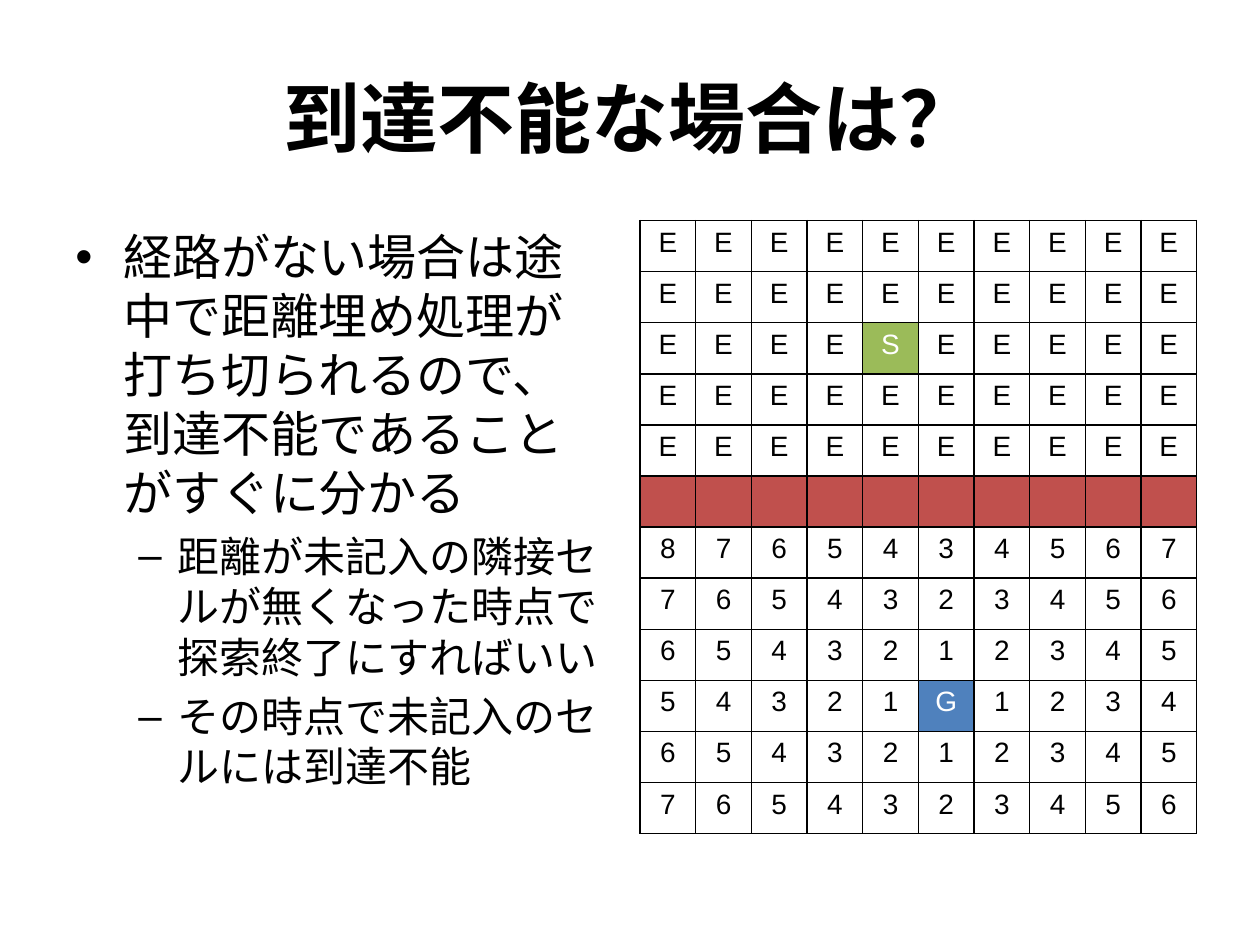
from lxml import etree
from pptx import Presentation
from pptx.dml.color import RGBColor
from pptx.enum import text
from pptx.oxml.ns import qn
from pptx.util import Inches, Pt

# Content
TITLE = "到達不能な場合は？"
BULLETS = [
    (0, "経路がない場合は途中で距離埋め処理が打ち切られるので、到達不能であることがすぐに分かる"),
    (1, "距離が未記入の隣接セルが無くなった時点で探索終了にすればいい"),
    (1, "その時点で未記入のセルには到達不能"),
]
WALL = "#"
GRID = [
    "EEEEEEEEEE",
    "EEEEEEEEEE",
    "EEEESEEEEE",
    "EEEEEEEEEE",
    "EEEEEEEEEE",
    WALL * 10,
    "8765434567",
    "7654323456",
    "6543212345",
    "54321G1234",
    "6543212345",
    "7654323456",
]

# Style
COLORS = {"ink": "000000", "light": "FFFFFF", "start": "9BBB59",
          "goal": "4F81BD", "wall": "C0504D"}
CELL_FILLS = {"S": "start", "G": "goal", WALL: "wall"}
JAPANESE, LATIN = "Noto Sans CJK JP", "Arial"
LEVELS = [
    {"size": 28, "line": 33.7, "left": 0.38, "hang": 0.38, "mark": "•"},
    {"size": 24, "line": 28.9, "left": 0.81, "hang": 0.31, "mark": "–"},
]


def add_span(para, words, size, font, color="ink", bold=False):
    span = para.add_run()
    span.text = words
    span.font.size = Pt(size)
    span.font.name = font
    span.font.bold = bold
    span.font.color.rgb = RGBColor.from_string(COLORS[color])
    east_asian = etree.SubElement(span.font._element, qn("a:ea"))
    east_asian.set("typeface", font)


def add_box(page, left, top, width, height, anchor):
    box = page.shapes.add_textbox(*map(Inches, (left, top, width, height)))
    box.text_frame.word_wrap = True
    box.text_frame.vertical_anchor = anchor
    return box.text_frame


def set_bullet(para, level):
    props = para._p.get_or_add_pPr()
    props.set("marL", str(Inches(level["left"])))
    props.set("indent", str(-Inches(level["hang"])))
    etree.SubElement(props, qn("a:buFont")).set("typeface", LATIN)
    etree.SubElement(props, qn("a:buChar")).set("char", level["mark"])


def set_borders(cell):
    props = cell._tc.get_or_add_tcPr()
    for position, side in enumerate(("lnL", "lnR", "lnT", "lnB")):
        line = etree.Element(qn(f"a:{side}"), w=str(Pt(1)))
        fill = etree.SubElement(line, qn("a:solidFill"))
        etree.SubElement(fill, qn("a:srgbClr")).set("val", COLORS["ink"])
        props.insert(position, line)


def fill_cell(cell, mark):
    if mark in CELL_FILLS:
        cell.fill.solid()
        cell.fill.fore_color.rgb = RGBColor.from_string(COLORS[CELL_FILLS[mark]])
    else:
        cell.fill.background()
    set_borders(cell)
    if mark != WALL:
        para = cell.text_frame.paragraphs[0]
        para.alignment = text.PP_ALIGN.CENTER
        add_span(para, mark, 16, LATIN, "light" if mark in CELL_FILLS else "ink")


def main():
    deck = Presentation()
    deck.slide_width, deck.slide_height = Inches(10), Inches(7.5)
    page = deck.slides.add_slide(deck.slide_layouts[6])

    # Title
    para = add_box(page, 0.5, 0.3, 9, 1.25, text.MSO_ANCHOR.MIDDLE).paragraphs[0]
    para.alignment = text.PP_ALIGN.CENTER
    add_span(para, TITLE, 44, JAPANESE, bold=True)

    # Bullets
    frame = add_box(page, 0.5, 1.75, 4.42, 4.95, text.MSO_ANCHOR.TOP)
    for index, (depth, words) in enumerate(BULLETS):
        para = frame.add_paragraph() if index else frame.paragraphs[0]
        level = LEVELS[depth]
        para.level = depth
        para.line_spacing = Pt(level["line"])
        para.space_before = Pt(level["size"] * 0.2)
        set_bullet(para, level)
        add_span(para, words, level["size"], JAPANESE)

    # Distance grid
    rows, columns = len(GRID), len(GRID[0])
    width, height = Inches(4.42), Inches(4.87)
    table = page.shapes.add_table(rows, columns, Inches(5.08), Inches(1.75),
                                  width, height).table
    table.first_row = table.horz_banding = False
    for column in table.columns:
        column.width = width // columns
    for row, marks in zip(table.rows, GRID):
        row.height = height // rows
        for cell, mark in zip(row.cells, marks):
            fill_cell(cell, mark)

    deck.save("out.pptx")


if __name__ == "__main__":
    main()
